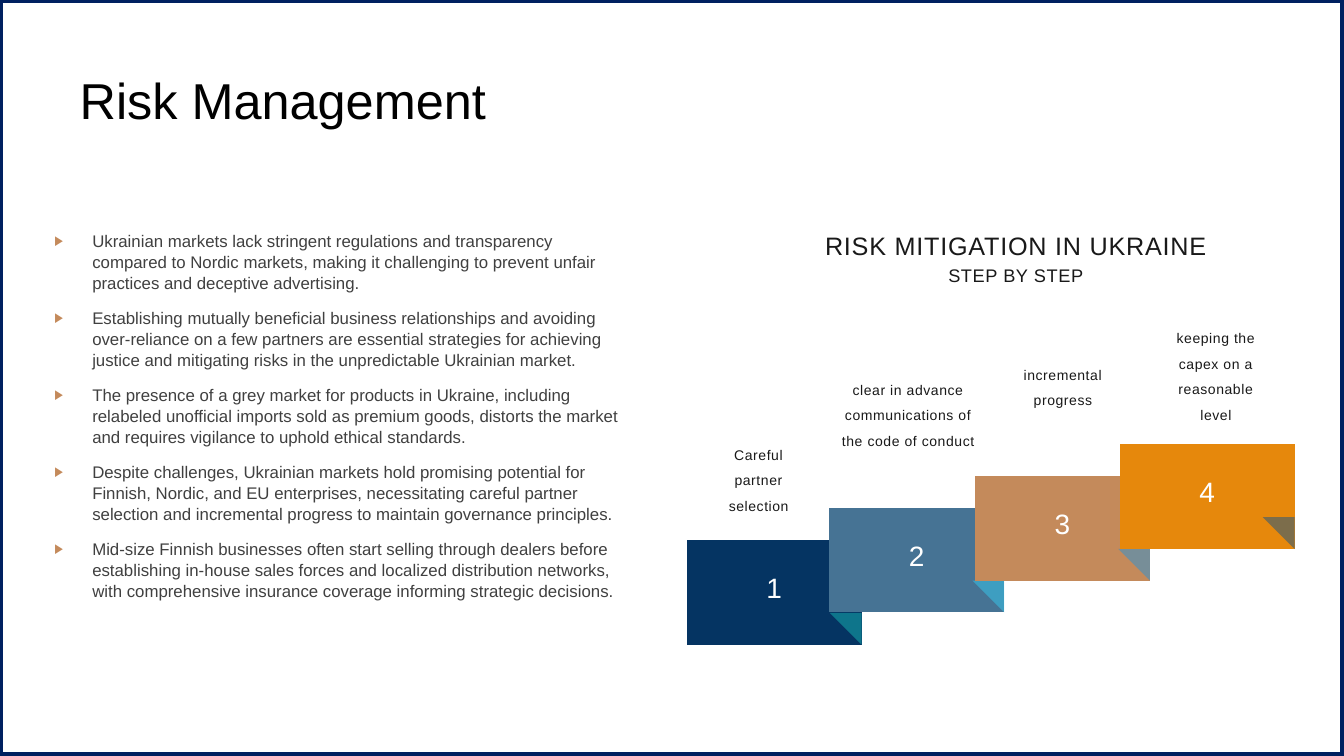
from lxml.etree import SubElement
from pptx import Presentation
from pptx.dml.color import RGBColor
from pptx.enum.shapes import MSO_SHAPE as Preset
from pptx.enum.text import MSO_ANCHOR as Anchor, MSO_AUTO_SIZE as AutoSize, PP_ALIGN as Align
from pptx.oxml.ns import qn
from pptx.util import Pt

PX = 9144  # EMU per px, 100 px to the inch
WIDTH, HEIGHT = 2666, 1500
FONT = "Arial"
INK = "191919"

BULLETS = [
    "Ukrainian markets lack stringent regulations and transparency compared to Nordic markets, making it challenging to prevent unfair practices and deceptive advertising.",
    "Establishing mutually beneficial business relationships and avoiding over-reliance on a few partners are essential strategies for achieving justice and mitigating risks in the unpredictable Ukrainian market.",
    "The presence of a grey market for products in Ukraine, including relabeled unofficial imports sold as premium goods, distorts the market and requires vigilance to uphold ethical standards.",
    "Despite challenges, Ukrainian markets hold promising potential for Finnish, Nordic, and EU enterprises, necessitating careful partner selection and incremental progress to maintain governance principles.",
    "Mid-size Finnish businesses often start selling through dealers before establishing in-house sales forces and localized distribution networks, with comprehensive insurance coverage informing strategic decisions.",
]

# Card left and top, card colour, fold colour, label, label box; all relative to the staircase
STEPS = [
    (0, 619, "053462", "18B6B4", "Careful partner selection", (50, 416, 186, 147)),
    (283, 555, "467394", "37C9EF", "clear in advance communications of the code of conduct",
     (306, 287, 267, 145)),
    (572, 492, "C48A5B", "2C92D5", "incremental progress", (644, 257, 205, 98)),
    (859, 429, "E6880C", "13538A", "keeping the capex on a reasonable level",
     (957, 185, 186, 197)),
]
CARD_WIDTH, CARD_HEIGHT, FOLD = 347, 208, 63


def color(value):
    return RGBColor.from_string(value)


def place(shape, left, top, width, height):
    shape.left, shape.top = left * PX, top * PX
    shape.width, shape.height = width * PX, height * PX


def add_run(paragraph, text, size, ink, tracking=0):
    run = paragraph.add_run()
    run.text = text
    run.font.name, run.font.size = FONT, Pt(size)
    run.font.color.rgb = color(ink)
    if tracking:
        run.font._element.set("spc", str(round(tracking * 100)))


def add_caption(slide, box, text, size, ink, tracking, leading, inset=0, middle=False):
    """Centred text with fixed line spacing."""
    shape = slide.shapes.add_textbox(*(value * PX for value in box))
    frame = shape.text_frame
    frame.word_wrap = True
    frame.auto_size = AutoSize.NONE if middle else AutoSize.SHAPE_TO_FIT_TEXT
    frame.vertical_anchor = Anchor.MIDDLE if middle else Anchor.TOP
    frame.margin_left = frame.margin_right = inset * PX
    frame.margin_top = frame.margin_bottom = inset * PX
    paragraph = frame.paragraphs[0]
    paragraph.alignment = Align.CENTER
    paragraph.line_spacing = Pt(leading)
    add_run(paragraph, text, size, ink, tracking)


def add_outline(slide, points, fill):
    builder = slide.shapes.build_freeform(*points[0], scale=PX)
    builder.add_line_segments(points[1:], close=True)
    shape = builder.convert_to_shape()
    shape.shadow.inherit = False
    shape.fill.solid()
    shape.fill.fore_color.rgb = color(fill)
    shape.line.fill.background()
    return shape


def add_border(slide):
    border = slide.shapes.add_shape(Preset.RECTANGLE, 0, 0, WIDTH * PX, HEIGHT * PX)
    border.shadow.inherit = False
    border.fill.background()
    border.line.color.rgb = color("002060")
    border.line.width = Pt(10)
    # Behind the placeholders
    slide.shapes._spTree.insert(2, border._element)


def fill_title(title, box):
    place(title, *box)
    frame = title.text_frame
    frame.auto_size = AutoSize.NONE
    frame.vertical_anchor = Anchor.TOP
    paragraph = frame.paragraphs[0]
    paragraph.alignment = Align.LEFT
    add_run(paragraph, "Risk Management", 72, "000000")


def add_bullet(paragraph):
    properties = paragraph._p.get_or_add_pPr()
    properties.set("marL", str(75 * PX))
    properties.set("indent", str(-75 * PX))
    bullet_color = SubElement(properties, qn("a:buClr"))
    SubElement(bullet_color, qn("a:srgbClr"), val="C48A5B")
    SubElement(properties, qn("a:buSzPct"), val="80000")
    SubElement(properties, qn("a:buChar"), char="▶")


def fill_body(body, box):
    place(body, *box)
    frame = body.text_frame
    frame.auto_size = AutoSize.NONE
    for index, text in enumerate(BULLETS):
        paragraph = frame.add_paragraph() if index else frame.paragraphs[0]
        add_bullet(paragraph)
        paragraph.space_before = Pt(20 if index else 0)
        paragraph.line_spacing = 1.04
        add_run(paragraph, text, 24, "404040")


def add_step(slide, left, top, number, fill, fold_fill):
    right, bottom = left + CARD_WIDTH, top + CARD_HEIGHT
    add_outline(slide, [(left, top), (right, top), (right, bottom), (left, bottom)], fill)
    add_caption(slide, (left, top - 30, CARD_WIDTH, CARD_HEIGHT + 30), str(number),
                40, "FFFFFF", 2, 56, inset=6, middle=True)
    # Folded corner, half transparent
    fold_left, fold_top = right - FOLD, bottom - FOLD
    fold = add_outline(
        slide, [(fold_left, fold_top), (fold_left, bottom), (right, bottom)], fold_fill)
    fold.rotation = 180
    fold_color = fold._element.spPr.find(qn("a:solidFill"))[0]
    SubElement(fold_color, qn("a:alpha"), val="50000")


def add_staircase(slide, left, top):
    for number, (x, y, fill, fold_fill, label, box) in enumerate(STEPS, 1):
        add_step(slide, left + x, top + y, number, fill, fold_fill)
        label_left, label_top, width, height = box
        add_caption(slide, (left + label_left, top + label_top, width, height),
                    label, 20, INK, 0.8, 36.4)
    # Headings
    add_caption(slide, (left + 102, top + 66, 1102, 45), "STEP BY STEP", 26, INK, 0.8, 36.4)
    add_caption(slide, (left + 102, top, 1102, 59), "RISK MITIGATION IN UKRAINE",
                36, INK, 1.1, 47.2)


def main():
    presentation = Presentation()
    presentation.slide_width, presentation.slide_height = WIDTH * PX, HEIGHT * PX
    slide = presentation.slides.add_slide(presentation.slide_layouts[1])
    add_border(slide)
    fill_title(slide.shapes.title, (148, 133, 2044, 289))
    fill_body(slide.placeholders[1], (98, 452, 1155, 936))
    add_staircase(slide, 1362, 452)
    presentation.save("out.pptx")


if __name__ == "__main__":
    main()
